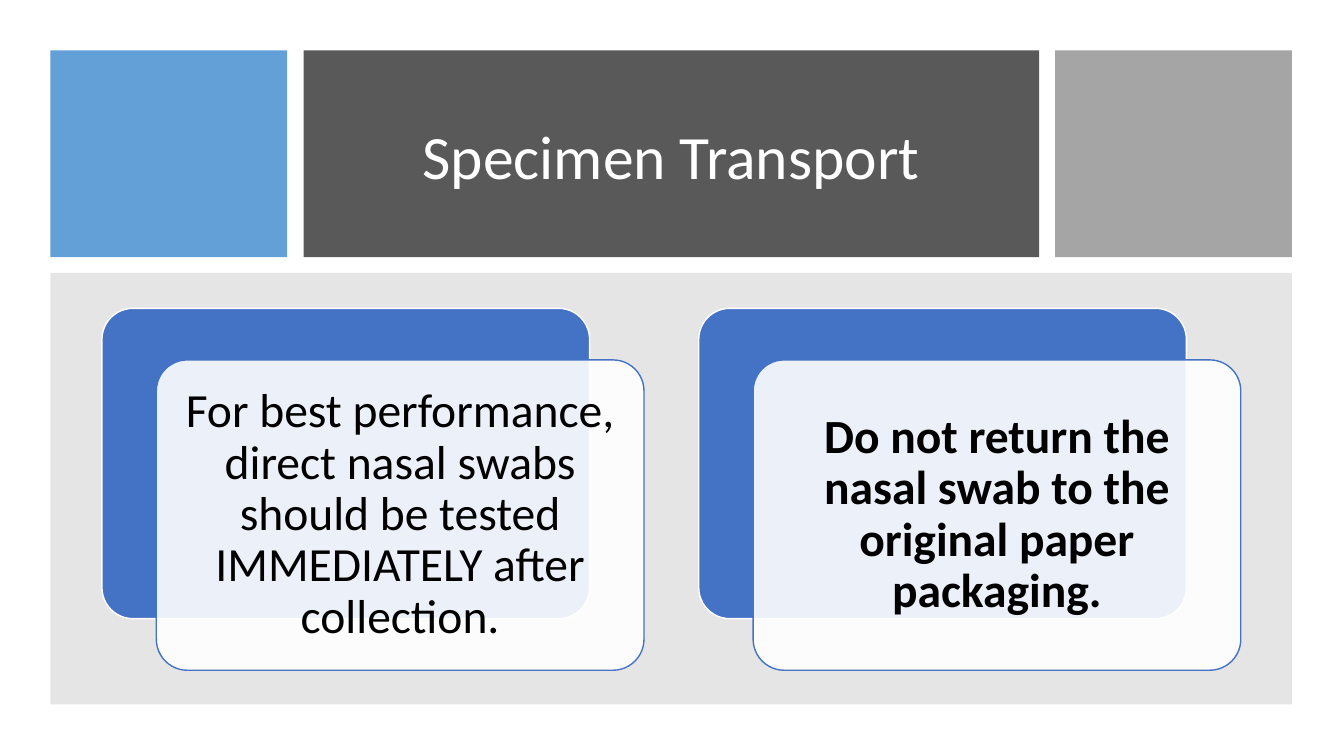
import pptx
import pptx.dml.color
import pptx.enum.shapes
import pptx.enum.text
import pptx.oxml.ns
import pptx.util
from lxml import etree
from pptx.dml.color import RGBColor
from pptx.enum.shapes import MSO_SHAPE
from pptx.util import Cm

WHITE = RGBColor(0xFF, 0xFF, 0xFF)
BLACK = RGBColor(0x00, 0x00, 0x00)
SKY = RGBColor(0x5B, 0x9B, 0xD5)
CHARCOAL = RGBColor(0x59, 0x59, 0x59)
SILVER = RGBColor(0xA5, 0xA5, 0xA5)
GRAY = RGBColor(0x80, 0x80, 0x80)
BLUE = RGBColor(0x44, 0x72, 0xC4)


def add_box(kind, left, top, width, height, color, opacity=100, outline=None):
    """Add a filled shape; lengths are in centimetres, opacity in percent."""
    shape = slide.shapes.add_shape(kind, Cm(left), Cm(top), Cm(width), Cm(height))
    shape.shadow.inherit = False
    shape.fill.solid()
    shape.fill.fore_color.rgb = color
    if opacity < 100:
        color_element = shape.fill._xPr.find(".//" + pptx.oxml.ns.qn("a:srgbClr"))
        alpha = etree.SubElement(color_element, pptx.oxml.ns.qn("a:alpha"))
        alpha.set("val", str(opacity * 1000))
    if outline is None:
        shape.line.fill.background()
    else:
        shape.line.color.rgb = outline
        shape.line.width = pptx.util.Pt(1)
    return shape


def format_text(text_frame, size, color, bold=False):
    text_frame.word_wrap = True
    text_frame.auto_size = pptx.enum.text.MSO_AUTO_SIZE.NONE
    text_frame.vertical_anchor = pptx.enum.text.MSO_ANCHOR.MIDDLE
    paragraph = text_frame.paragraphs[0]
    paragraph.alignment = pptx.enum.text.PP_ALIGN.CENTER
    paragraph.line_spacing = 0.9
    font = paragraph.runs[0].font
    font.name = "Calibri"
    font.size = pptx.util.Pt(size)
    font.bold = bold
    font.color.rgb = color


presentation = pptx.Presentation()
presentation.slide_width = Cm(33.87)
presentation.slide_height = Cm(19.05)
slide = presentation.slides.add_slide(presentation.slide_layouts[5])

# Header blocks and content panel
for left, width, color, opacity in [
    (1.27, 5.97, SKY, 95),
    (7.65, 18.54, CHARCOAL, 100),
    (26.59, 5.97, SILVER, 100),
]:
    add_box(MSO_SHAPE.RECTANGLE, left, 1.27, width, 5.21, color, opacity)
add_box(MSO_SHAPE.RECTANGLE, 1.27, 6.88, 31.29, 10.87, GRAY, 20)

# Title, brought in front of the header blocks
title = slide.shapes.title
title.left, title.top, title.width, title.height = Cm(8.46), Cm(2.03), Cm(16.92), Cm(3.96)
title.text_frame.text = "Specimen Transport"
format_text(title.text_frame, 44, WHITE)
slide.shapes._spTree.append(title._element)

# Instruction cards, each with an offset blue card behind it
CARD_WIDTH, CARD_HEIGHT = 12.29, 7.82
instructions = [
    ("For best performance, direct nasal swabs should be tested IMMEDIATELY after collection.", False),
    ("Do not return the nasal swab to the original paper packaging.", True),
]
for index, (instruction, bold) in enumerate(instructions):
    left, top = 2.57 + index * 15.04, 7.77
    back = add_box(MSO_SHAPE.ROUNDED_RECTANGLE, left, top,
                   CARD_WIDTH, CARD_HEIGHT, BLUE, outline=WHITE)
    card = add_box(MSO_SHAPE.ROUNDED_RECTANGLE, left + 1.37, top + 1.3,
                   CARD_WIDTH, CARD_HEIGHT, WHITE, 90, BLUE)
    back.adjustments[0] = card.adjustments[0] = 0.1
    text_frame = card.text_frame
    text_frame.margin_left = text_frame.margin_right = Cm(0.36)
    text_frame.margin_top = text_frame.margin_bottom = Cm(0.36)
    text_frame.text = instruction
    format_text(text_frame, 34, BLACK, bold)

presentation.save("out.pptx")
